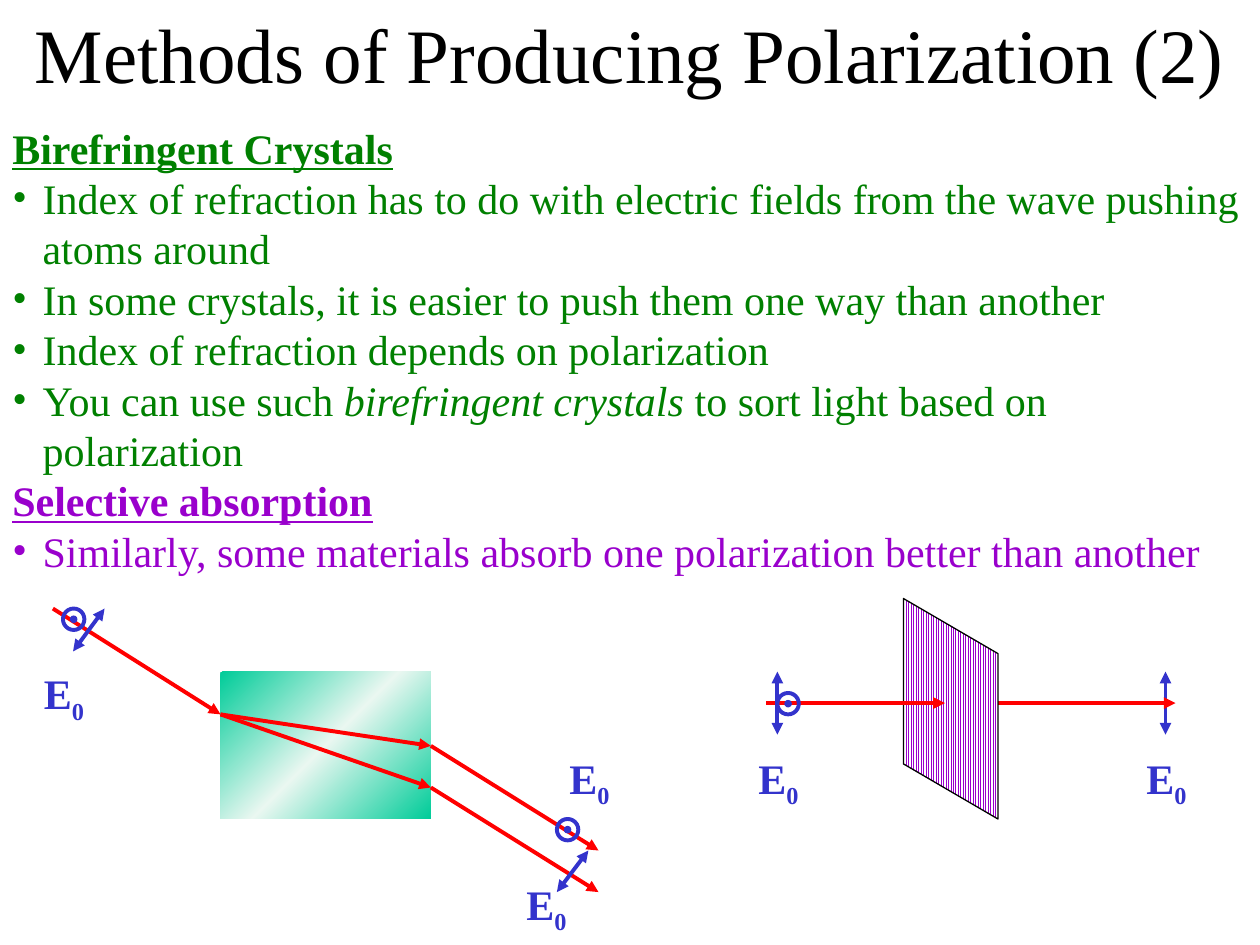
from lxml.etree import SubElement
from pptx import Presentation
from pptx.dml.color import RGBColor
from pptx.enum.dml import MSO_PATTERN
from pptx.enum.shapes import MSO_CONNECTOR, MSO_SHAPE
from pptx.enum.text import PP_ALIGN
from pptx.oxml import parse_xml
from pptx.oxml.ns import nsdecls, qn
from pptx.util import Inches, Pt

BLACK = RGBColor(0, 0, 0)
WHITE = RGBColor(255, 255, 255)
GREEN = RGBColor(0, 0x80, 0)
PURPLE = RGBColor(0x99, 0, 0xCC)
RED = RGBColor(255, 0, 0)
BLUE = RGBColor(0x33, 0x33, 0xCC)
TEAL = RGBColor(0, 0xCC, 0x99)
MINT = RGBColor(0xEA, 0xF7, 0xF1)

HEADING = {"bold": True, "underline": True}
SECTIONS = [
    (GREEN, "Birefringent Crystals", [
        [("Index of refraction has to do with electric fields from the wave "
          "pushing atoms around", {})],
        [("In some crystals, it is easier to push them one way than another", {})],
        [("Index of refraction depends on polarization", {})],
        [("You can use such ", {}), ("birefringent crystals", {"italic": True}),
         (" to sort light based on polarization", {})],
    ]),
    (PURPLE, "Selective absorption", [
        [("Similarly, some materials absorb one polarization better than another", {})],
    ]),
]
CRYSTAL_RAYS = [
    ((0.42, 4.83), (1.75, 5.67)),
    ((1.75, 5.67), (3.42, 5.92)),
    ((1.75, 5.67), (3.42, 6.25)),
    ((3.42, 5.92), (4.75, 6.75)),
    ((3.42, 6.25), (4.75, 7.08)),
]
FIELD_LABELS = [(4.42, 5.92), (4.08, 6.92), (0.25, 5.25), (9, 5.92), (5.92, 5.92)]


def add_box(page, left, top, width, height):
    """Add a wrapping text box and return its text frame."""
    box = page.shapes.add_textbox(*map(Inches, (left, top, width, height)))
    box.text_frame.word_wrap = True
    return box.text_frame


def add_span(para, text, size, color, formats):
    """Add one formatted run to a paragraph."""
    span = para.add_run()
    span.text = text
    for name, value in {"name": "Times New Roman", "size": Pt(size), **formats}.items():
        setattr(span.font, name, value)
    span.font.color.rgb = color
    return span


def add_bullet(para):
    """Give a paragraph a hanging bullet."""
    properties = para._p.get_or_add_pPr()
    indent = Inches(0.24)
    properties.set("marL", str(indent))
    properties.set("indent", str(-indent))
    SubElement(properties, qn("a:buFont"), typeface="Times New Roman")
    SubElement(properties, qn("a:buChar"), char="•")


def add_title(page):
    """Add the centred slide title."""
    para = add_box(page, 0, 0, 10, 0.83).paragraphs[0]
    para.alignment = PP_ALIGN.CENTER
    add_span(para, "Methods of Producing Polarization (2)", 44, BLACK, {})


def add_body(page):
    """Add the headed bullet sections in one text box."""
    frame = add_box(page, 0, 0.92, 10, 3.69)
    para = frame.paragraphs[0]
    for number, (color, heading, bullets) in enumerate(SECTIONS):
        if number:
            para = frame.add_paragraph()
        add_span(para, heading, 24, color, HEADING)
        for spans in bullets:
            para = frame.add_paragraph()
            add_bullet(para)
            for text, formats in spans:
                add_span(para, text, 24, color, formats)


def add_field_label(page, left, top):
    """Add a bold E with a subscript zero."""
    para = add_box(page, left, top, 0.58, 0.5).paragraphs[0]
    add_span(para, "E", 24, BLUE, {"bold": True})
    zero = add_span(para, "0", 24, BLUE, {"bold": True})
    zero._r.get_or_add_rPr().set("baseline", "-25000")


def add_arrow(page, start, end, color, double=False):
    """Add a straight arrow with one or two heads."""
    arrow = page.shapes.add_connector(
        MSO_CONNECTOR.STRAIGHT, *map(Inches, (*start, *end)))
    arrow.line.color.rgb = color
    arrow.line.width = Pt(2.25)
    line = arrow.line._get_or_add_ln()
    for tag in ("a:headEnd", "a:tailEnd") if double else ("a:tailEnd",):
        SubElement(line, qn(tag), type="triangle")
    SubElement(arrow._element.spPr, qn("a:effectLst"))


def add_preset(page, kind, left, top, width, height):
    """Add a preset shape without shadow, fill or line."""
    shape = page.shapes.add_shape(kind, *map(Inches, (left, top, width, height)))
    shape.shadow.inherit = False
    shape.fill.background()
    shape.line.fill.background()
    return shape


def add_outward_field(page, left, top):
    """Add a dotted circle for a field pointing out of the page."""
    ring = add_preset(page, MSO_SHAPE.OVAL, left, top, 0.17, 0.17)
    ring.line.color.rgb = BLUE
    ring.line.width = Pt(2.25)
    dot = add_preset(page, MSO_SHAPE.OVAL, left + 0.055, top + 0.055, 0.06, 0.06)
    dot.fill.solid()
    dot.fill.fore_color.rgb = BLUE


def add_crystal(page):
    """Add the crystal block with its diagonal sheen."""
    crystal = add_preset(page, MSO_SHAPE.RECTANGLE, 1.75, 5.33, 1.67, 1.17)
    stops = "".join(
        f'<a:gs pos="{place * 1000}"><a:srgbClr val="{color}"/></a:gs>'
        for place, color in ((0, TEAL), (50, MINT), (100, TEAL)))
    gradient = parse_xml(
        f'<a:gradFill {nsdecls("a")} rotWithShape="1"><a:gsLst>{stops}</a:gsLst>'
        '<a:lin ang="2700000" scaled="1"/></a:gradFill>')
    properties = crystal._element.spPr
    properties.replace(properties.find(qn("a:noFill")), gradient)


def add_polarizer(page):
    """Add the striped absorbing sheet."""
    sheet = add_preset(page, MSO_SHAPE.PARALLELOGRAM, 6.67, 5.25, 1.75, 0.75)
    sheet.rotation = 90
    sheet.adjustments[0] = 0.583
    sheet.fill.patterned()
    sheet.fill.pattern = MSO_PATTERN.NARROW_VERTICAL
    sheet.fill.fore_color.rgb = PURPLE
    sheet.fill.back_color.rgb = WHITE
    sheet.line.color.rgb = BLACK
    sheet.line.width = Pt(0.75)


def add_crystal_diagram(page):
    """Add the crystal splitting a ray by polarization."""
    add_crystal(page)
    for start, end in CRYSTAL_RAYS:
        add_arrow(page, start, end, RED)
    add_outward_field(page, 4.42, 6.5)
    add_arrow(page, (4.42, 7.08), (4.67, 6.75), BLUE, double=True)
    add_outward_field(page, 0.5, 4.83)
    add_arrow(page, (0.58, 5.17), (0.83, 4.83), BLUE, double=True)


def add_absorption_diagram(page):
    """Add the sheet that passes one polarization."""
    add_arrow(page, (9.25, 5.83), (9.25, 5.33), BLUE, double=True)
    add_arrow(page, (7.92, 5.58), (9.33, 5.58), RED)
    add_polarizer(page)
    add_arrow(page, (6.08, 5.58), (7.5, 5.58), RED)
    add_outward_field(page, 6.17, 5.5)
    add_arrow(page, (6.17, 5.83), (6.17, 5.33), BLUE, double=True)


def main():
    """Build the slide and save the deck."""
    deck = Presentation()
    deck.slide_width, deck.slide_height = Inches(10), Inches(7.5)
    page = deck.slides.add_slide(deck.slide_layouts[6])
    add_title(page)
    add_body(page)
    add_crystal_diagram(page)
    add_absorption_diagram(page)
    for left, top in FIELD_LABELS:
        add_field_label(page, left, top)
    deck.save("out.pptx")


if __name__ == "__main__":
    main()
